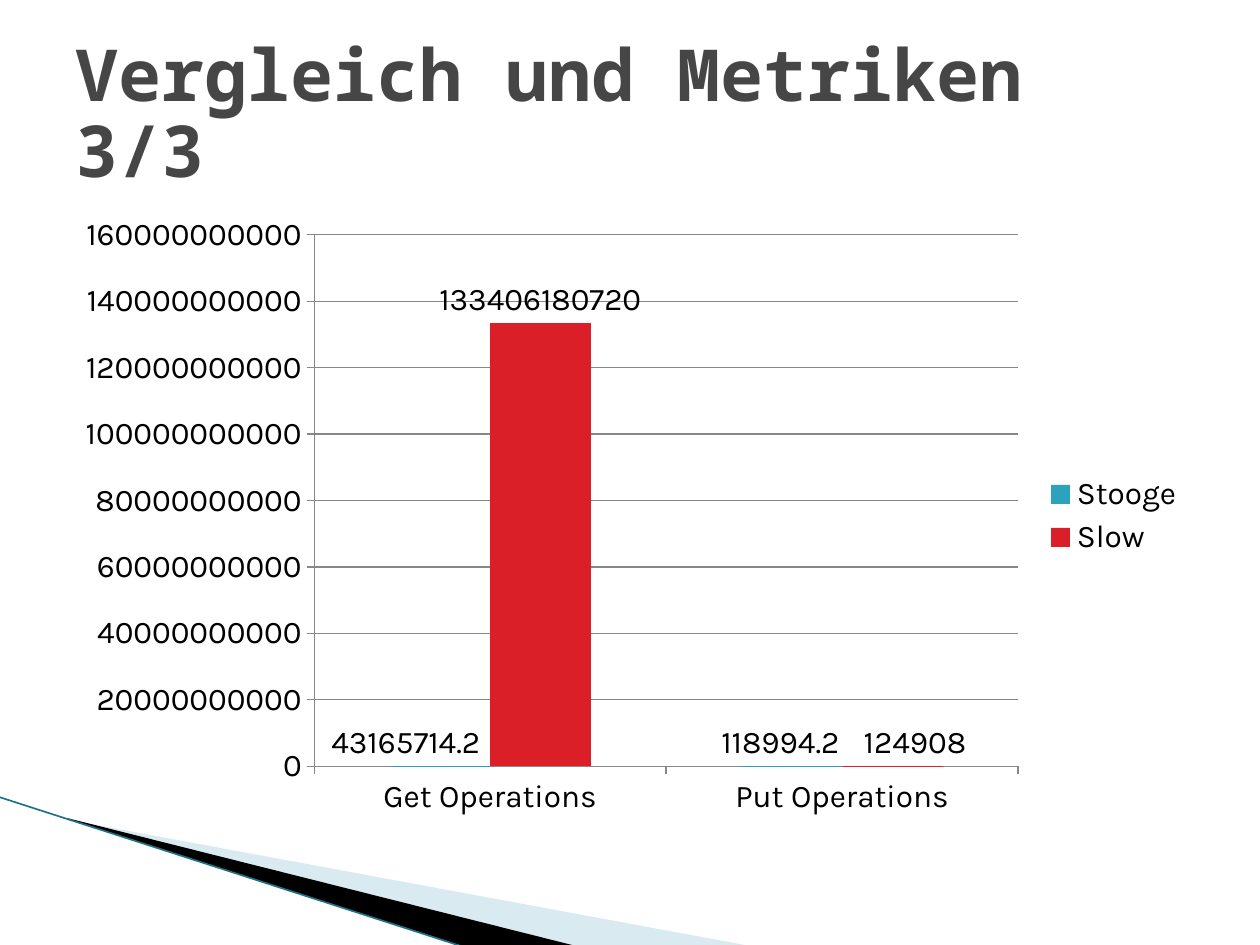
"""Build the slide comparing the operation counts of two sorting algorithms."""
from lxml.etree import SubElement
from pptx import Presentation
from pptx.chart.data import CategoryChartData
from pptx.dml.color import RGBColor
from pptx.enum.chart import XL_CHART_TYPE, XL_LABEL_POSITION, XL_LEGEND_POSITION, XL_TICK_MARK
from pptx.enum.shapes import MSO_CONNECTOR
from pptx.enum.text import MSO_ANCHOR
from pptx.oxml import parse_xml
from pptx.oxml.ns import nsdecls, qn
from pptx.util import Pt

SCALE = 914400 / 126
BLACK = RGBColor(0x00, 0x00, 0x00)
TITLE_GREY = RGBColor(0x46, 0x46, 0x46)
AXIS_GREY = RGBColor(0x87, 0x87, 0x87)
PALE_BLUE = RGBColor(0xA0, 0xCB, 0xDC)
EDGE_TEAL = RGBColor(0x1F, 0x73, 0x89)
TEAL = RGBColor(0x2D, 0xA2, 0xBF)
RED = RGBColor(0xDA, 0x1F, 0x28)

TITLE = "Vergleich und Metriken 3/3"
TITLE_BOX = (63, 38, 1134, 158)
CHART_BOX = (63, 204, 1134, 624)
CATEGORIES = ["Get Operations", "Put Operations"]
SERIES = [
    {"name": "Stooge", "values": (43165714.2, 118994.2), "color": TEAL, "label_shifts": (-0.03, -0.01)},
    {"name": "Slow", "values": (133406180720, 124908), "color": RED, "label_shifts": (0, 0.02)},
]
WEDGES = [
    {"points": [(69, 820), (750, 946), (575, 946), (69, 819)], "color": PALE_BLUE, "opacity": 40},
    {"points": [(67, 818), (576, 946), (469, 948), (68, 819)], "color": BLACK, "opacity": 100},
]
EDGE = (-1, 797, 467, 948)


def px(*lengths):
    return [round(length * SCALE) for length in lengths]


def add_wedge(slide, points, color, opacity):
    builder = slide.shapes.build_freeform(*points[0], scale=SCALE)
    builder.add_line_segments(points[1:], close=True)
    shape = builder.convert_to_shape()
    shape.shadow.inherit = False
    shape.fill.solid()
    shape.fill.fore_color.rgb = color
    shape.line.fill.background()
    if opacity < 100:
        color_element = shape._element.spPr.find(".//" + qn("a:srgbClr"))
        SubElement(color_element, qn("a:alpha"), val=str(opacity * 1000))


def add_edge(slide):
    connector = slide.shapes.add_connector(MSO_CONNECTOR.STRAIGHT, *px(*EDGE))
    connector.line.color.rgb = EDGE_TEAL
    connector.line.width = Pt(0.95)
    SubElement(connector._element.spPr, qn("a:effectLst"))


def style_font(font, name, size, color):
    font.name = name
    font.size = Pt(size)
    font.color.rgb = color


def shift_label(series, index, shift):
    label = series.points[index].data_label
    style_font(label.font, "Karla", 18, BLACK)
    label.position = XL_LABEL_POSITION.OUTSIDE_END
    if shift:
        position = series._element.xpath(f"c:dLbls/c:dLbl/c:idx[@val='{index}']")[0]
        position.addnext(parse_xml(
            f'<c:layout {nsdecls("c")}><c:manualLayout>'
            f'<c:x val="{shift}"/><c:y val="0"/></c:manualLayout></c:layout>'))


def add_chart(slide):
    data = CategoryChartData()
    data.categories = CATEGORIES
    for entry in SERIES:
        data.add_series(entry["name"], entry["values"])
    chart = slide.shapes.add_chart(XL_CHART_TYPE.COLUMN_CLUSTERED, *px(*CHART_BOX), data).chart
    style_font(chart.font, "Karla", 18, BLACK)
    chart.has_title = False
    chart.has_legend = True
    chart.legend.position = XL_LEGEND_POSITION.RIGHT
    chart.legend.include_in_layout = False
    for axis in (chart.category_axis, chart.value_axis):
        axis.major_tick_mark = XL_TICK_MARK.OUTSIDE
        axis.format.line.color.rgb = AXIS_GREY
    chart.value_axis.major_gridlines.format.line.color.rgb = AXIS_GREY
    plot = chart.plots[0]
    plot.gap_width = 150
    plot.overlap = 0
    plot.vary_by_categories = False
    for series, entry in zip(plot.series, SERIES):
        series.format.fill.solid()
        series.format.fill.fore_color.rgb = entry["color"]
        series.invert_if_negative = False
        labels = series.data_labels
        labels.show_value = True
        labels.position = XL_LABEL_POSITION.OUTSIDE_END
        style_font(labels.font, "Karla", 18, BLACK)
        for index, shift in enumerate(entry["label_shifts"]):
            shift_label(series, index, shift)


def add_title(slide):
    text_frame = slide.shapes.add_textbox(*px(*TITLE_BOX)).text_frame
    text_frame.word_wrap = True
    text_frame.vertical_anchor = MSO_ANCHOR.MIDDLE
    text_frame.text = TITLE
    paragraph = text_frame.paragraphs[0]
    paragraph.line_spacing = 0.88
    font = paragraph.runs[0].font
    style_font(font, "Noto Sans Mono", 41, TITLE_GREY)
    font.bold = True


def main():
    presentation = Presentation()
    presentation.slide_width, presentation.slide_height = px(1260, 945)
    slide = presentation.slides.add_slide(presentation.slide_layouts[6])
    for wedge in WEDGES:
        add_wedge(slide, **wedge)
    add_edge(slide)
    add_chart(slide)
    add_title(slide)
    presentation.save("out.pptx")


if __name__ == "__main__":
    main()
